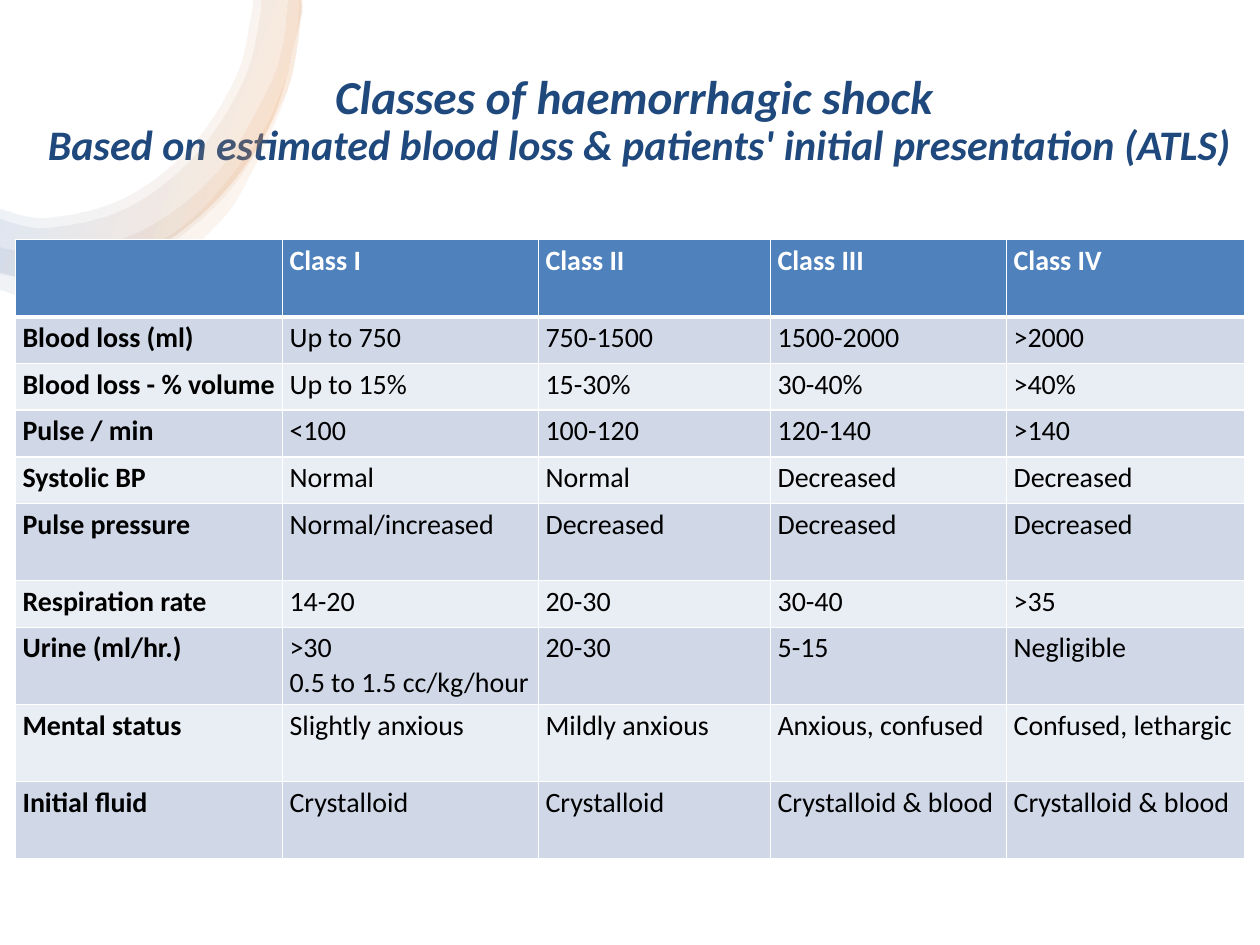
import pptx
import pptx.dml.color
import pptx.enum.shapes
import pptx.enum.text
import pptx.oxml
import pptx.oxml.ns
import pptx.util

Pt = pptx.util.Pt
FONT = "Calibri"
COLORS = {
    "white": "FFFFFF",
    "black": "000000",
    "title": "1F497D",
    "header": "4F81BD",
    "odd_row": "D0D8E8",
    "even_row": "E9EDF4",
    "orange": "F79646",
}
GRADIENT_STOPS = [(2, "white"), (16, "orange"), (85, "header"), (100, "white")]

# Edges of the ring bands, as points each curve passes through.
SHARED_OUTER = [(171.4, 0), (170.6, 13), (154.3, 70.4), (121, 116.8), (76.6, 147.8),
                (26.6, 159.1), (0, 155.5)]
RING_BANDS = [
    (SHARED_OUTER,
     [(144, 0), (143.3, 7.9), (134.6, 43.9), (108, 85), (69.8, 113.8), (26.6, 124.6),
      (0, 119.5)]),
    (SHARED_OUTER,
     [(148.3, 0), (148.3, 8.6), (139, 46.1), (110.9, 89.3), (71.3, 119.5), (26.6, 130.3),
      (0, 125.3)]),
    ([(171.4, 0), (169.2, 27.4), (161.3, 56.9), (132.5, 106.6), (92.2, 141.8),
      (45.4, 159.9), (20.9, 159.8), (0, 156.2)],
     [(164.2, 0), (161.3, 25.2), (152.6, 51.1), (125.3, 96.5), (87.1, 128.2),
      (43.9, 144), (20.9, 144.7), (0, 141.1)]),
    ([(172.1, 0), (172.1, 8.6), (162.7, 55.4), (136.8, 110.9), (118.1, 133.9),
      (96.5, 151.9), (46.8, 171.4), (20.2, 171.4), (0, 165.6)],
     [(170.6, 0), (168.5, 23.8), (159.8, 53.3), (146.9, 79.9), (116.6, 118.1),
      (90.7, 138.2), (56.9, 154.1), (20.9, 158.4), (0, 155.5)]),
]

COLUMN_WIDTHS = [152.6, 146.3, 132.6, 134.9, 136.2]
SHORT_ROW, TALL_ROW = 26.7, 44.1
TALL_ROWS = {0, 5, 7, 8, 9}
ROWS = [
    ["", "Class I", "Class II", "Class III", "Class IV"],
    ["Blood loss (ml)", "Up to 750", "750-1500", "1500-2000", ">2000"],
    ["Blood loss - % volume", "Up to 15%", "15-30%", "30-40%", ">40%"],
    ["Pulse / min", "<100", "100-120", "120-140", ">140"],
    ["Systolic BP", "Normal", "Normal", "Decreased", "Decreased"],
    ["Pulse pressure", "Normal/increased", "Decreased", "Decreased", "Decreased"],
    ["Respiration rate", "14-20", "20-30", "30-40", ">35"],
    ["Urine (ml/hr.)", ">30\n0.5 to 1.5 cc/kg/hour", "20-30", "5-15", "Negligible"],
    ["Mental status", "Slightly anxious", "Mildly anxious", "Anxious, confused",
     "Confused, lethargic"],
    ["Initial fluid", "Crystalloid", "Crystalloid", "Crystalloid & blood",
     "Crystalloid & blood"],
]


def rgb(name):
    return pptx.dml.color.RGBColor.from_string(COLORS[name])


def format_font(font, size, color, bold, italic=False):
    font.name = FONT
    font.size = Pt(size)
    font.color.rgb = rgb(color)
    font.bold = bold
    font.italic = italic


def add_backdrop(slide, left, top, width, height):
    """Place a white panel behind everything else."""
    backdrop = slide.shapes.add_shape(
        pptx.enum.shapes.MSO_SHAPE.RECTANGLE, *map(Pt, (left, top, width, height)))
    backdrop.shadow.inherit = False
    backdrop.fill.solid()
    backdrop.fill.fore_color.rgb = rgb("white")
    backdrop.line.fill.background()
    slide.shapes.title._element.addprevious(backdrop._element)


def add_title(slide, left, top, width, height):
    title = slide.shapes.title
    title.left, title.top, title.width, title.height = map(Pt, (left, top, width, height))
    frame = title.text_frame
    frame.word_wrap = True
    frame.auto_size = pptx.enum.text.MSO_AUTO_SIZE.NONE
    frame.vertical_anchor = pptx.enum.text.MSO_ANCHOR.MIDDLE
    frame.text = ("Classes of haemorrhagic shock \v"
                  "Based on estimated blood loss & patients' initial presentation (ATLS)")
    paragraph = frame.paragraphs[0]
    paragraph.alignment = pptx.enum.text.PP_ALIGN.CENTER
    paragraph.line_spacing = 0.9
    for run, size in zip(paragraph.runs, (27, 24)):
        format_font(run.font, size, "title", True, True)


def curve_segments(knots):
    """Return the Bezier points (two controls, one end) between successive knots."""
    padded = [knots[0], *knots, knots[-1]]
    return [
        ((b[0] + (c[0] - a[0]) / 6, b[1] + (c[1] - a[1]) / 6),
         (c[0] - (d[0] - b[0]) / 6, c[1] - (d[1] - b[1]) / 6), c)
        for a, b, c, d in zip(padded, padded[1:], padded[2:], padded[3:])]


def round_edges(band, outer, inner):
    """Turn the straight segments along both edges of a band into curves."""
    lines = list(band._element.iter(pptx.oxml.ns.qn("a:lnTo")))
    segments = curve_segments(outer) + [None] + curve_segments(inner)
    for line, segment in zip(lines, segments):
        if segment:
            points = "".join(f'<a:pt x="{Pt(x)}" y="{Pt(y)}"/>' for x, y in segment)
            line.getparent().replace(line, pptx.oxml.parse_xml(
                f'<a:cubicBezTo {pptx.oxml.ns.nsdecls("a")}>{points}</a:cubicBezTo>'))


def set_ring_gradient(shape):
    stops = "".join(
        f'<a:gs pos="{position * 1000}"><a:srgbClr val="{COLORS[color]}">'
        '<a:alpha val="10000"/></a:srgbClr></a:gs>'
        for position, color in GRADIENT_STOPS)
    gradient = pptx.oxml.parse_xml(
        f'<a:gradFill {pptx.oxml.ns.nsdecls("a")} rotWithShape="1"><a:gsLst>{stops}</a:gsLst>'
        f'<a:lin ang="{200 * 60000}" scaled="0"/></a:gradFill>')
    shape.fill.background()
    no_fill = shape._element.spPr.find(pptx.oxml.ns.qn("a:noFill"))
    no_fill.getparent().replace(no_fill, gradient)


def add_corner_ring(slide, left, top):
    for outer, inner in RING_BANDS:
        inner = inner[::-1]
        points = [(Pt(x), Pt(y)) for x, y in outer + inner]
        builder = slide.shapes.build_freeform(*points[0])
        builder.add_line_segments(points[1:], close=True)
        band = builder.convert_to_shape(Pt(left), Pt(top))
        band.shadow.inherit = False
        round_edges(band, outer, inner)
        set_ring_gradient(band)
        band.line.fill.background()


def set_cell_borders(cell, bottom_width, top_width):
    properties = cell._tc.get_or_add_tcPr()
    sides = (("lnL", 1), ("lnR", 1), ("lnT", top_width), ("lnB", bottom_width))
    for index, (side, width) in enumerate(sides):
        properties.insert(index, pptx.oxml.parse_xml(
            f'<a:{side} {pptx.oxml.ns.nsdecls("a")} w="{Pt(width)}"><a:solidFill>'
            f'<a:srgbClr val="{COLORS["white"]}"/></a:solidFill></a:{side}>'))


def fill_cell(cell, text, row, column):
    is_header = row == 0
    cell.margin_left = cell.margin_right = Pt(4)
    cell.margin_top = cell.margin_bottom = Pt(2.2)
    cell.fill.solid()
    cell.fill.fore_color.rgb = rgb(
        "header" if is_header else "odd_row" if row % 2 else "even_row")
    set_cell_borders(cell, 3 if is_header else 1, 3 if row == 1 else 1)
    cell.text_frame.text = text
    for paragraph in cell.text_frame.paragraphs:
        for run in paragraph.runs:
            format_font(run.font, 16, "white" if is_header else "black",
                        is_header or column == 0)


def add_shock_table(slide, left, top):
    heights = [TALL_ROW if row in TALL_ROWS else SHORT_ROW for row in range(len(ROWS))]
    table = slide.shapes.add_table(
        len(ROWS), len(COLUMN_WIDTHS), Pt(left), Pt(top),
        Pt(sum(COLUMN_WIDTHS)), Pt(sum(heights))).table
    for column, width in zip(table.columns, COLUMN_WIDTHS):
        column.width = Pt(width)
    for row, (height, texts) in enumerate(zip(heights, ROWS)):
        table.rows[row].height = Pt(height)
        for column, text in enumerate(texts):
            fill_cell(table.cell(row, column), text, row, column)


def main():
    presentation = pptx.Presentation()
    presentation.slide_width, presentation.slide_height = Pt(720), Pt(540)
    slide = presentation.slides.add_slide(presentation.slide_layouts[5])
    add_backdrop(slide, 0, 0, 720, 540)
    add_title(slide, 19.4, 17.3, 692, 104.4)
    add_corner_ring(slide, 0, 0)
    add_shock_table(slide, 8.9, 137)
    presentation.save("out.pptx")


if __name__ == "__main__":
    main()
